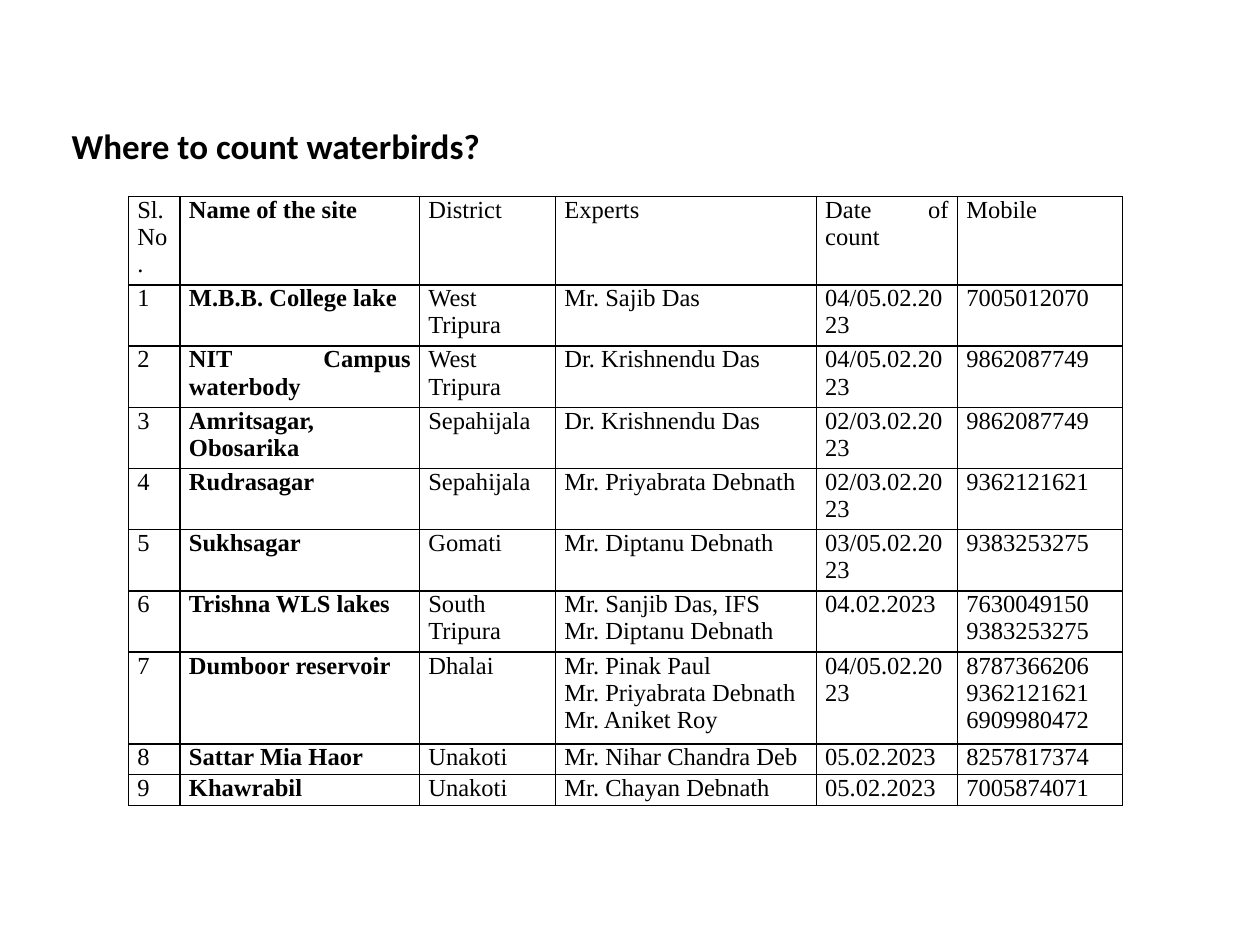
from lxml import etree
from pptx import Presentation
from pptx.dml.color import RGBColor
from pptx.enum import text
from pptx.oxml import ns
from pptx.util import Inches, Pt

BLACK = "000000"
COLUMN_WIDTHS = [0.41, 1.9, 1.08, 2.07, 1.12, 1.31]
LINE_PITCH = 17.5
HEADER_HEIGHT = 50.5
SITE_COLUMN = 1

HEADER = ["Sl. No.", "Name of the site", "District", "Experts", "Date of count", "Mobile"]
# Site, district, experts, date, mobile; a line break starts a new paragraph.
SITES = [
    ["M.B.B. College lake", "West Tripura", "Mr. Sajib Das", "04/05.02.2023", "7005012070"],
    ["NIT Campus waterbody", "West Tripura", "Dr. Krishnendu Das", "04/05.02.2023", "9862087749"],
    ["Amritsagar, Obosarika", "Sepahijala", "Dr. Krishnendu Das", "02/03.02.2023", "9862087749"],
    ["Rudrasagar", "Sepahijala", "Mr. Priyabrata Debnath", "02/03.02.2023", "9362121621"],
    ["Sukhsagar", "Gomati", "Mr. Diptanu Debnath", "03/05.02.2023", "9383253275"],
    ["Trishna WLS lakes", "South Tripura", "Mr. Sanjib Das, IFS\nMr. Diptanu Debnath",
     "04.02.2023", "7630049150\n9383253275"],
    ["Dumboor reservoir", "Dhalai", "Mr. Pinak Paul\nMr. Priyabrata Debnath\nMr. Aniket Roy",
     "04/05.02.2023", "8787366206\n9362121621\n6909980472"],
    ["Sattar Mia Haor", "Unakoti", "Mr. Nihar Chandra Deb", "05.02.2023", "8257817374"],
    ["Khawrabil", "Unakoti", "Mr. Chayan Debnath", "05.02.2023", "7005874071"],
]
ROW_LINES = [2, 2, 2, 2, 2, 2, 3, 1, 1]


def color(value):
    return RGBColor.from_string(value)


def add_run(p, words, font, size, bold=False):
    r = p.add_run()
    r.text = words
    r.font.name = font
    r.font.size = Pt(size)
    r.font.bold = bold
    r.font.color.rgb = color(BLACK)


def add_title(slide, words):
    box = slide.shapes.add_textbox(Inches(0.47), Inches(0.94), Inches(8.83), Inches(0.44))
    tf = box.text_frame
    tf.word_wrap = True
    add_run(tf.paragraphs[0], words, "Calibri", 20, True)


def set_borders(cell, value, width):
    tc_pr = cell._tc.get_or_add_tcPr()
    for position, side in enumerate(("lnL", "lnR", "lnT", "lnB")):
        line = etree.Element(ns.qn("a:" + side), w=str(Pt(width)))
        fill = etree.SubElement(line, ns.qn("a:solidFill"))
        etree.SubElement(fill, ns.qn("a:srgbClr"), val=value)
        tc_pr.insert(position, line)


def fill_cell(cell, words, bold):
    cell.margin_left = cell.margin_right = Inches(0.07)
    cell.margin_top = cell.margin_bottom = 0
    cell.fill.background()
    set_borders(cell, BLACK, 1)
    tf = cell.text_frame
    for i, line in enumerate(words.split("\n")):
        p = tf.add_paragraph() if i else tf.paragraphs[0]
        p.alignment = text.PP_ALIGN.JUSTIFY
        add_run(p, line, "Times New Roman", 14, bold)


def add_site_table(slide):
    rows = [HEADER] + [[str(n)] + site for n, site in enumerate(SITES, 1)]
    heights = [HEADER_HEIGHT] + [LINE_PITCH * lines for lines in ROW_LINES]
    table = slide.shapes.add_table(
        len(rows), len(HEADER), Inches(1.02), Inches(1.56),
        Inches(sum(COLUMN_WIDTHS)), Pt(sum(heights))).table
    table.first_row = table.horz_banding = False
    for column, width in zip(table.columns, COLUMN_WIDTHS):
        column.width = Inches(width)
    for row, height, values in zip(table.rows, heights, rows):
        row.height = Pt(height)
        for i, (cell, words) in enumerate(zip(row.cells, values)):
            fill_cell(cell, words, i == SITE_COLUMN)


def main():
    prs = Presentation()
    prs.slide_width, prs.slide_height = Inches(10), Inches(7.5)
    slide = prs.slides.add_slide(prs.slide_layouts[6])
    add_title(slide, "Where to count waterbirds?")
    add_site_table(slide)
    prs.save("out.pptx")


if __name__ == "__main__":
    main()
